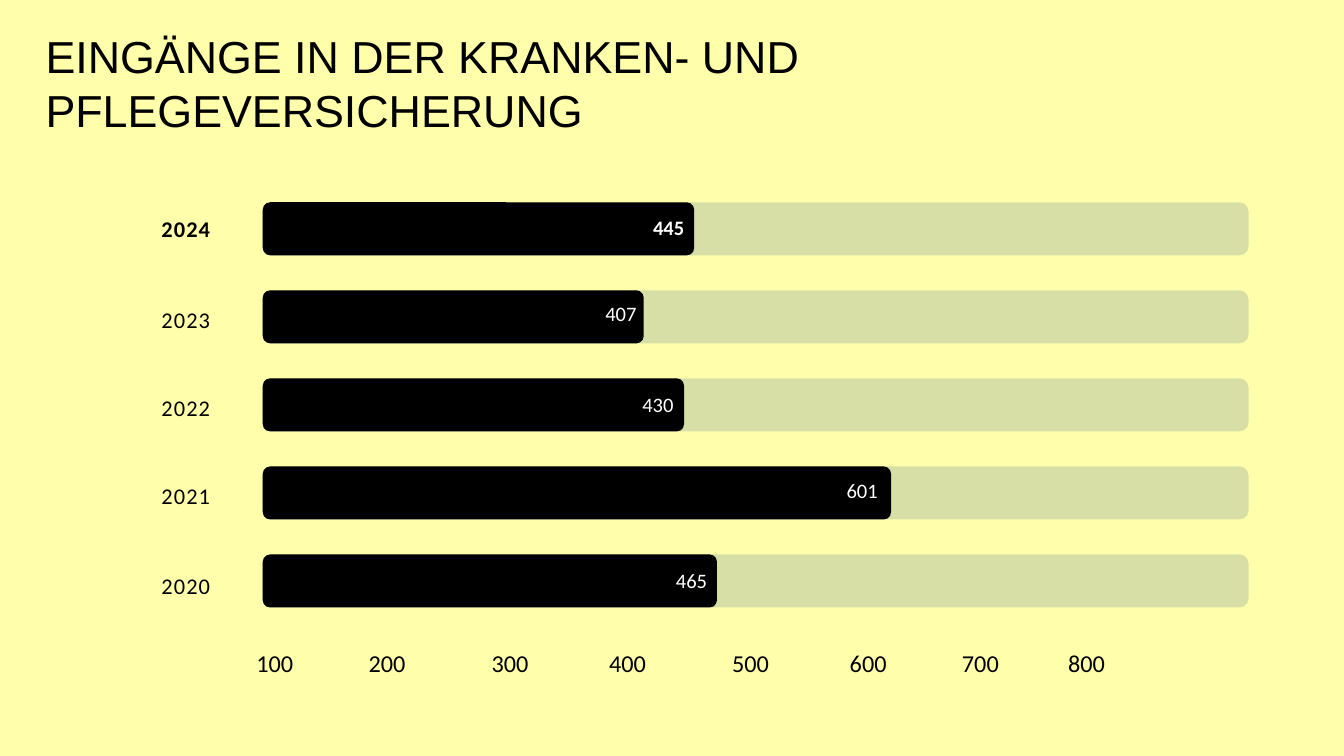
"""Bar slide of yearly receipts in health and care insurance."""
from lxml.etree import SubElement
from pptx import Presentation
from pptx.dml.color import RGBColor
from pptx.enum.shapes import MSO_SHAPE
from pptx.enum.text import PP_ALIGN
from pptx.oxml.ns import qn
from pptx.util import Inches, Pt

COLORS = {"back": "FFFFAB", "ink": "000000", "track": "376092", "light": "FFFFFF"}
COLS, ROWS = 20, 11.25
LEFT, TOP, STEP, HIGH, FULL = 3.91, 3.01, 1.31, 0.79, 14.67
BARS = [
    ("2024", "445", 6.42, 3.1, 9.62, 3.15),
    ("2023", "407", 5.67, 4.46, 8.91, 4.43),
    ("2022", "430", 6.27, 5.76, 9.46, 5.79),
    ("2021", "601", 9.35, 7.07, 12.5, 7.07),
    ("2020", "465", 6.76, 8.41, 9.96, 8.4),
]
TICKS = [3.25, 4.92, 6.75, 8.5, 10.33, 12.08, 13.75, 15.33]


def write(frame, text, size, font="Calibri", color="ink", bold=False,
          align=PP_ALIGN.LEFT, line=None, space=0):
    para = frame.paragraphs[0]
    para.alignment = align
    if line:
        para.line_spacing = Pt(line)
    run = para.add_run()
    run.text = text
    run.font.size, run.font.name, run.font.bold = Pt(size), font, bold
    run.font.color.rgb = RGBColor.from_string(COLORS[color])
    if space:
        run._r.get_or_add_rPr().set("spc", str(round(space * 100)))


class Deck:
    def __init__(self):
        self.show = Presentation()
        self.show.slide_width = Inches(20)
        self.show.slide_height = Inches(11.25)
        self.slide = self.show.slides.add_slide(self.show.slide_layouts[6])
        self.paint(self.slide.background.fill, "back")

    def paint(self, fill, color):
        fill.solid()
        fill.fore_color.rgb = RGBColor.from_string(COLORS[color])

    def grid(self, col, row, wide, high):
        unit_x = self.show.slide_width / COLS
        unit_y = self.show.slide_height / ROWS
        return [round(n) for n in (col * unit_x, row * unit_y, wide * unit_x, high * unit_y)]

    def label(self, area, text, size, wrap=True, inset=True, **style):
        frame = self.slide.shapes.add_textbox(*self.grid(*area)).text_frame
        frame.word_wrap = wrap
        if not inset:
            frame.margin_left = frame.margin_right = 0
            frame.margin_top = frame.margin_bottom = 0
        write(frame, text, size, **style)

    def bar(self, area, color, curve, alpha=None):
        shape = self.slide.shapes.add_shape(MSO_SHAPE.ROUNDED_RECTANGLE, *self.grid(*area))
        shape.adjustments[0] = curve
        shape.shadow.inherit = False
        shape.line.fill.background()
        self.paint(shape.fill, color)
        if alpha:
            tone = shape.element.spPr.find(".//" + qn("a:srgbClr"))
            SubElement(tone, qn("a:alpha")).set("val", str(alpha * 1000))


def main():
    deck = Deck()
    deck.label((0.58, 0.38, 16.01, 1.72), "EINGÄNGE IN DER KRANKEN- UND PFLEGEVERSICHERUNG",
               48, font="Arial")
    for i, (year, value, wide, year_row, col, row) in enumerate(BARS):
        top = TOP + i * STEP
        bold = i == 0
        deck.label((0.91, year_row, 3.71, 0.5), year, 24, inset=False, bold=bold,
                   align=PP_ALIGN.CENTER, line=36, space=1.2)
        deck.bar((LEFT, top, FULL, HIGH), "track", 0.17, alpha=20)
        deck.bar((LEFT, top, wide, HIGH), "ink", 0.14)
        deck.label((col, row, 0.67, 0.47), value, 22, wrap=False, color="light", bold=bold)
    for i, col in enumerate(TICKS, 1):
        deck.label((col, 9.58, 1.68, 0.5), str(i * 100), 26, inset=False,
                   align=PP_ALIGN.CENTER, line=36.4)
    deck.show.save("out.pptx")


if __name__ == "__main__":
    main()
